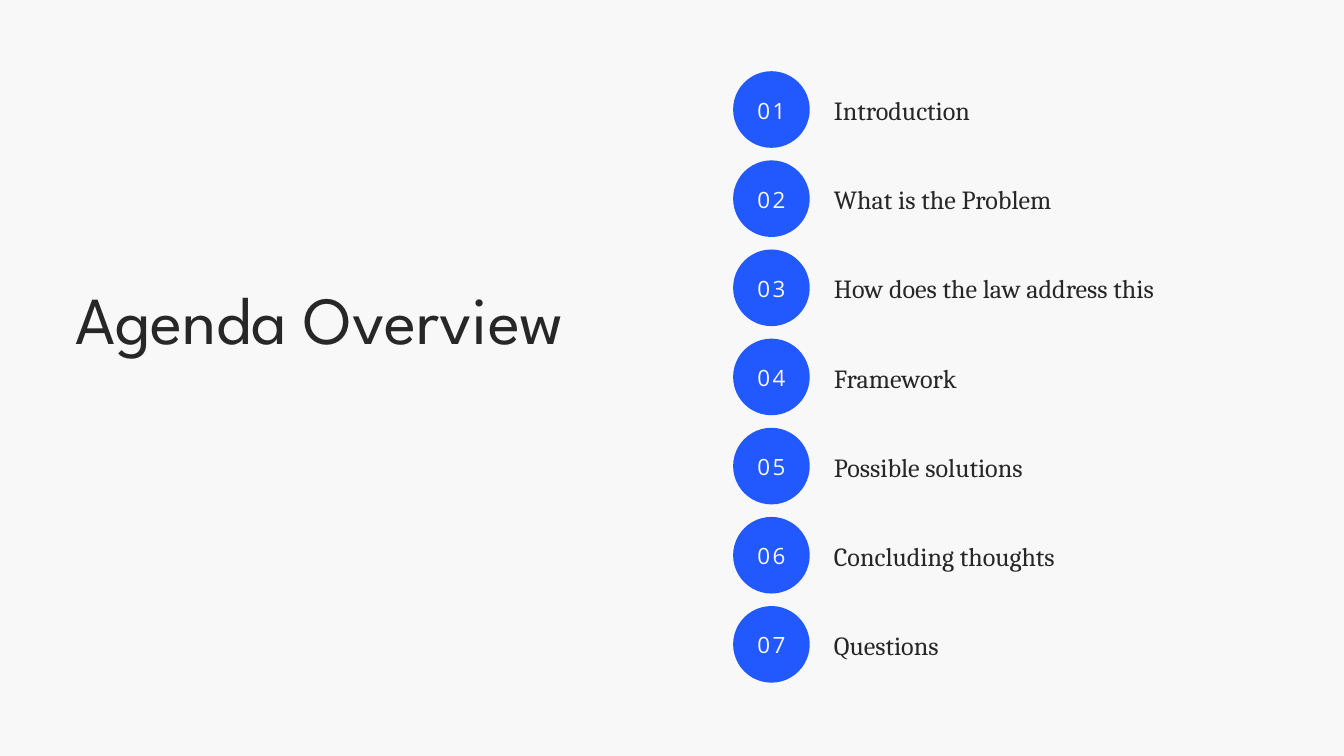
"""Build an agenda slide with a title, numbered circles and a list of topics."""
from dataclasses import dataclass

from lxml.etree import SubElement
from pptx import Presentation
from pptx.dml.color import RGBColor
from pptx.enum.shapes import MSO_SHAPE
from pptx.enum.text import MSO_ANCHOR, MSO_AUTO_SIZE, PP_ALIGN
from pptx.oxml.ns import qn
from pptx.util import Inches, Pt


@dataclass(frozen=True)
class Theme:
    paper: RGBColor = RGBColor.from_string("F8F8F8")
    ink: RGBColor = RGBColor.from_string("272727")
    accent: RGBColor = RGBColor.from_string("2159FF")
    title_size: Pt = Pt(72)
    topic_size: Pt = Pt(28)
    number_size: Pt = Pt(24)


def set_values(target, values):
    for name, value in values.items():
        setattr(target, name, value)


def write_paragraph(paragraph, text, paragraph_format, font_format, color):
    run = paragraph.add_run()
    run.text = text
    set_values(paragraph, paragraph_format)
    set_values(run.font, font_format)
    run.font.color.rgb = color
    return run


theme = Theme()
topics = [
    "Introduction",
    "What is the Problem",
    "How does the law address this",
    "Framework",
    "Possible solutions",
    "Concluding thoughts",
    "Questions",
]
row_pitch = 1.3265
circle_size = Inches(1.14)

frame_format = {
    "margin_left": 0,
    "margin_right": 0,
    "margin_top": 0,
    "margin_bottom": 0,
    "word_wrap": True,
    "auto_size": MSO_AUTO_SIZE.NONE,
    "vertical_anchor": MSO_ANCHOR.TOP,
}
number_frame_format = {
    **frame_format,
    "margin_bottom": Inches(0.05),
    "vertical_anchor": MSO_ANCHOR.MIDDLE,
}
title_format = {"alignment": PP_ALIGN.LEFT, "line_spacing": Pt(100.8), "space_before": Pt(0)}
topic_format = {
    "alignment": PP_ALIGN.LEFT,
    "line_spacing": Pt(39.2),
    "space_before": Pt(0),
    "space_after": Pt(56.3),
}
number_format = {"alignment": PP_ALIGN.CENTER, "line_spacing": Pt(33.6)}
title_font = {"name": "League Spartan", "size": theme.title_size}
topic_font = {"name": "Cambria", "size": theme.topic_size}
number_font = {"name": "Open Sans", "size": theme.number_size}

presentation = Presentation()
set_values(presentation, {"slide_width": Inches(20), "slide_height": Inches(11.25)})
slide = presentation.slides.add_slide(presentation.slide_layouts[1])
slide.background.fill.solid()
slide.background.fill.fore_color.rgb = theme.paper

title = slide.shapes.title
topic_list = slide.placeholders[1]
placements = [(title, (1.12, 3.93, 8.33, 2.74)), (topic_list, (12.41, 1.33, 6.47, 8.5))]
for shape, box in placements:
    set_values(shape, dict(zip(("left", "top", "width", "height"), map(Inches, box))))
    set_values(shape.text_frame, frame_format)

write_paragraph(
    title.text_frame.paragraphs[0], "Agenda Overview", title_format, title_font, theme.ink
)

for index, topic in enumerate(topics):
    circle = slide.shapes.add_shape(
        MSO_SHAPE.OVAL,
        Inches(10.91),
        Inches(1.06 + index * row_pitch),
        circle_size,
        circle_size,
    )
    circle.shadow.inherit = False
    circle.fill.solid()
    circle.fill.fore_color.rgb = theme.accent
    circle.line.fill.background()
    set_values(circle.text_frame, number_frame_format)
    number = write_paragraph(
        circle.text_frame.paragraphs[0],
        f"{index + 1:02d}",
        number_format,
        number_font,
        theme.paper,
    )
    number.font._element.set("spc", "240")

    frame = topic_list.text_frame
    paragraph = frame.add_paragraph() if index else frame.paragraphs[0]
    write_paragraph(paragraph, topic, topic_format, topic_font, theme.ink)
    properties = paragraph._p.get_or_add_pPr()
    properties.set("marL", "0")
    properties.set("indent", "0")
    SubElement(properties, qn("a:buNone"))

presentation.save("out.pptx")
